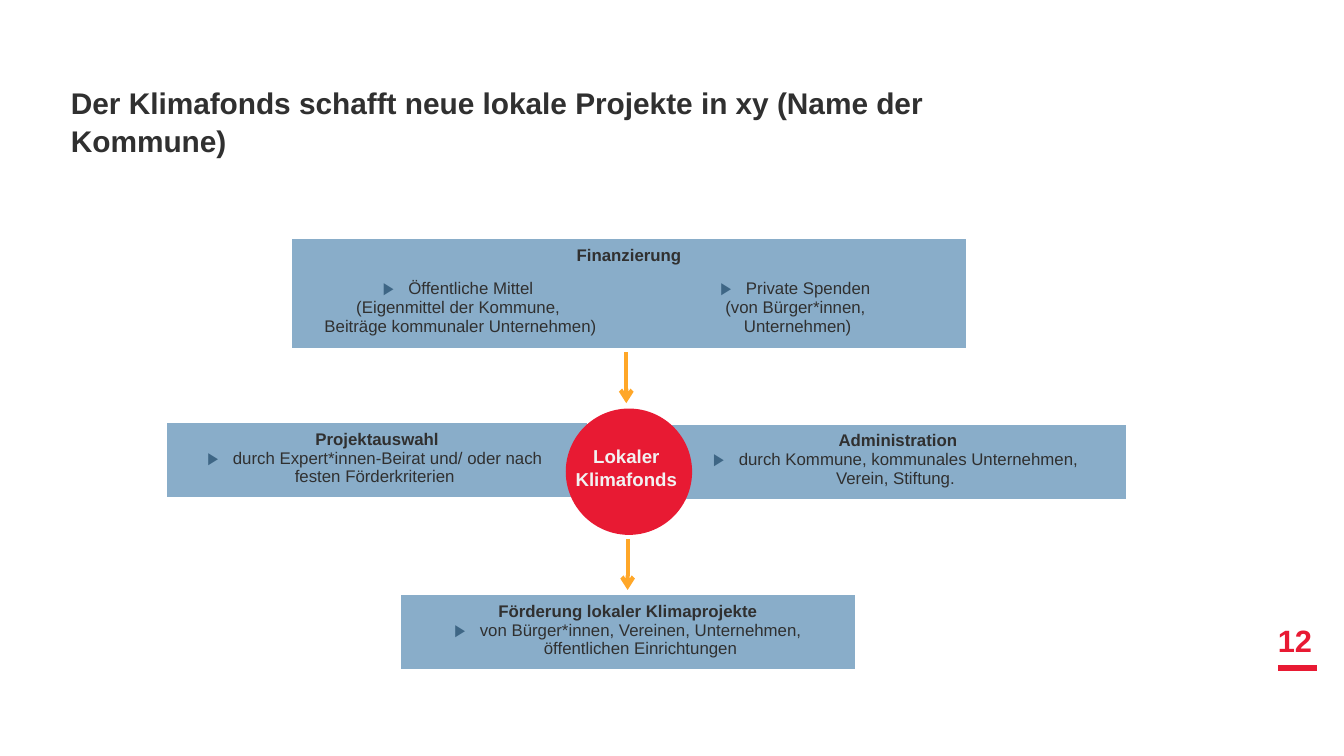
from dataclasses import dataclass

from lxml.etree import SubElement
from pptx import Presentation
from pptx.dml.color import RGBColor as RGB
from pptx.enum.shapes import MSO_CONNECTOR as Conn, MSO_SHAPE as Shape
from pptx.enum.text import MSO_ANCHOR as Anchor, PP_ALIGN as Align
from pptx.oxml.ns import qn
from pptx.util import Inches, Pt


@dataclass(frozen=True)
class Theme:
    font: str = "Arial"
    ink: str = "303030"
    panel: str = "89ADC9"
    bullet: str = "3E6685"
    accent: str = "E81A33"
    arrow: str = "FFA728"
    on_accent: str = "F2F2F2"
    title_size: float = 16
    number_size: float = 16.5
    hub_size: float = 10
    body_size: float = 9


def add_xml(parent, tag, **attrs):
    return SubElement(parent, qn(tag), attrs)


def inches(*values):
    return [Inches(v) for v in values]


class SlideBuilder:
    def __init__(self, slide, theme):
        self.s = slide
        self.theme = theme

    def style(self, p, size, color, bold=False, align=Align.CENTER):
        p.alignment = align
        values = {"name": self.theme.font, "size": Pt(size), "bold": bold}
        for r in p.runs:
            for key, value in values.items():
                setattr(r.font, key, value)
            r.font.color.rgb = RGB.from_string(color)

    def text(self, box, words, size, color, align=Align.CENTER,
             anchor=Anchor.TOP, spacing=1.05, side=0.1):
        tf = self.s.shapes.add_textbox(*inches(*box)).text_frame
        values = {"word_wrap": True, "vertical_anchor": anchor,
                  "margin_left": Inches(side), "margin_right": Inches(side),
                  "margin_top": Inches(0.04)}
        for key, value in values.items():
            setattr(tf, key, value)
        p = tf.paragraphs[0]
        p.text = words
        p.line_spacing = spacing
        self.style(p, size, color, True, align)

    def bullet(self, p):
        pPr = p._p.get_or_add_pPr()
        pPr.set("marL", str(Inches(0.19)))
        pPr.set("indent", str(-Inches(0.19)))
        add_xml(add_xml(pPr, "a:buClr"), "a:srgbClr", val=self.theme.bullet)
        add_xml(pPr, "a:buFont", typeface=self.theme.font)
        add_xml(pPr, "a:buChar", char="▶")

    def cell(self, cell, heading=None, lines=()):
        """Fill a borderless cell: bold heading, then lines, the first bulleted."""
        tcPr = cell._tc.get_or_add_tcPr()
        for side in ("a:lnL", "a:lnR", "a:lnT", "a:lnB"):
            add_xml(add_xml(tcPr, side, w="0"), "a:noFill")
        cell.fill.solid()
        cell.fill.fore_color.rgb = RGB.from_string(self.theme.panel)
        tf = cell.text_frame
        words = ([heading] if heading else []) + list(lines)
        for i, line in enumerate(words):
            p = tf.paragraphs[0] if i == 0 else tf.add_paragraph()
            if lines and line == lines[0]:
                self.bullet(p)
            p.add_run().text = line
            self.style(p, self.theme.body_size, self.theme.ink, line == heading)

    def table(self, left, top, width, row_heights, columns=1):
        frame = self.s.shapes.add_table(
            len(row_heights), columns, *inches(left, top, width, sum(row_heights)))
        table = frame.table
        table.first_row = table.horz_banding = False
        for row, height in zip(table.rows, row_heights):
            row.height = Inches(height)
        return table

    def panel(self, left, top, width, heading, lines):
        self.cell(self.table(left, top, width, [0.55]).cell(0, 0), heading, lines)

    def split_panel(self, left, top, width, heading, columns):
        table = self.table(left, top, width, [0.24, 0.56], len(columns))
        for i, lines in enumerate(columns):
            self.cell(table.cell(0, i), heading if i == 0 else None)
            self.cell(table.cell(1, i), lines=lines)
        table.cell(0, 0).merge(table.cell(0, len(columns) - 1))

    def circle(self, left, top, size):
        sp = self.s.shapes.add_shape(Shape.OVAL, *inches(left, top, size, size))
        sp.shadow.inherit = False
        sp.fill.solid()
        sp.fill.fore_color.rgb = RGB.from_string(self.theme.accent)
        sp.line.fill.background()

    def line(self, start, end, color, width, arrow=False):
        c = self.s.shapes.add_connector(Conn.STRAIGHT, *inches(*start, *end))
        c.line.color.rgb = RGB.from_string(color)
        c.line.width = Pt(width)
        if arrow:
            add_xml(c.line._get_or_add_ln(), "a:tailEnd", type="arrow")
        add_xml(c._element.spPr, "a:effectLst")


def main():
    prs = Presentation()
    prs.slide_width = Inches(10)
    prs.slide_height = prs.slide_width * 9 // 16
    theme = Theme()
    b = SlideBuilder(prs.slides.add_slide(prs.slide_layouts[6]), theme)

    b.line((9.51, 4.97), (9.8, 4.97), theme.accent, 3.5)
    b.text((9.3, 4.4, 0.67, 0.55), "12", theme.number_size, theme.accent,
           anchor=Anchor.BOTTOM, spacing=1.0)
    b.text((0.43, 0.58, 6.56, 2.91),
           "Der Klimafonds schafft neue lokale Projekte in xy (Name der Kommune)",
           theme.title_size, theme.ink, align=Align.LEFT)

    b.panel(4.98, 3.16, 3.4, "Administration",
            ["durch Kommune, kommunales Unternehmen, ", "Verein, Stiftung. "])
    b.panel(1.24, 3.15, 3.13, "Projektauswahl",
            ["durch Expert*innen-Beirat und/ oder nach ", "festen Förderkriterien "])
    b.circle(4.21, 3.04, 0.94)
    b.text((4.18, 3.26, 0.96, 0.44), "Lokaler Klimafonds",
           theme.hub_size, theme.on_accent, side=0.05)
    b.split_panel(2.17, 1.78, 5.02, "Finanzierung", [
        ["Öffentliche Mittel ", "(Eigenmittel der Kommune, ",
         "Beiträge kommunaler Unternehmen)"],
        ["Private Spenden ", "(von Bürger*innen, ", "Unternehmen)"],
    ])
    b.panel(2.98, 4.43, 3.38, "Förderung lokaler Klimaprojekte",
            ["von Bürger*innen, Vereinen, Unternehmen, öffentlichen Einrichtungen"])
    for x, top in ((4.66, 2.62), (4.67, 4.01)):
        b.line((x, top), (x, top + 0.38), theme.arrow, 2.25, arrow=True)

    prs.save("out.pptx")


if __name__ == "__main__":
    main()
